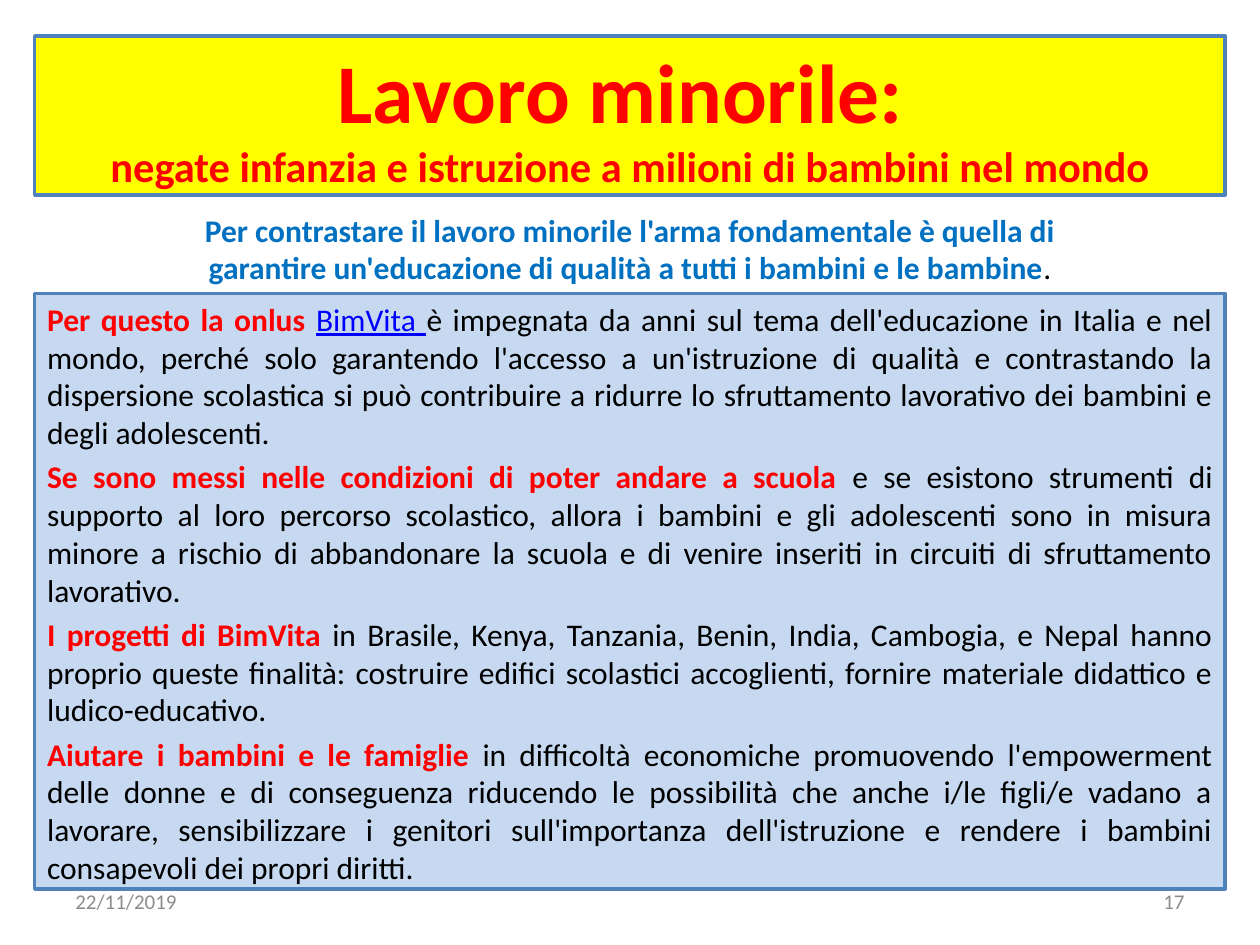
from pptx import Presentation
from pptx.dml.color import RGBColor
from pptx.enum.shapes import MSO_SHAPE as SHAPE
from pptx.enum.text import MSO_ANCHOR as ANCHOR, PP_ALIGN as ALIGN
from pptx.util import Cm, Pt

FONT = "Calibri"
RED = RGBColor(0xFF, 0x00, 0x00)
YELLOW = RGBColor(0xFF, 0xFF, 0x00)
PALE_BLUE = RGBColor(0xC6, 0xD9, 0xF1)
BORDER = RGBColor(0x4F, 0x81, 0xBD)
BLUE = RGBColor(0x00, 0x70, 0xC0)
LINK = RGBColor(0x00, 0x00, 0xFF)
BLACK = RGBColor(0x00, 0x00, 0x00)
GREY = RGBColor(0x8C, 0x8C, 0x8C)

BODY = [
    [("Per questo la onlus ", RED), ("BimVita ", LINK),
     ("è impegnata da anni sul tema dell'educazione in Italia e nel mondo, "
      "perché solo garantendo l'accesso a un'istruzione di qualità e "
      "contrastando la dispersione scolastica si può contribuire a ridurre lo "
      "sfruttamento lavorativo dei bambini e degli adolescenti. ", BLACK)],
    [("Se sono messi nelle condizioni di poter andare a scuola ", RED),
     ("e se esistono strumenti di supporto al loro percorso scolastico, allora "
      "i bambini e gli adolescenti sono in misura minore a rischio di "
      "abbandonare la scuola e di venire inseriti in circuiti di sfruttamento "
      "lavorativo.", BLACK)],
    [("I progetti di BimVita ", RED),
     ("in Brasile, Kenya, Tanzania, Benin, India, Cambogia, e Nepal hanno "
      "proprio queste finalità: costruire edifici scolastici accoglienti, "
      "fornire materiale didattico e ludico-educativo.", BLACK)],
    [("Aiutare i bambini e le famiglie ", RED),
     ("in difficoltà economiche promuovendo l'empowerment delle donne e di "
      "conseguenza riducendo le possibilità che anche i/le figli/e vadano a "
      "lavorare, sensibilizzare i genitori sull'importanza dell'istruzione e "
      "rendere i bambini consapevoli dei propri diritti.", BLACK)],
]


def add_panel(s, box, fill, anchor):
    sp = s.shapes.add_shape(SHAPE.RECTANGLE, *box)
    sp.shadow.inherit = False
    sp.fill.solid()
    sp.fill.fore_color.rgb = fill
    sp.line.color.rgb = BORDER
    sp.line.width = Pt(2)
    tf = sp.text_frame
    tf.word_wrap = True
    tf.vertical_anchor = anchor
    return tf


def add_text(s, box, anchor):
    tf = s.shapes.add_textbox(*box).text_frame
    tf.word_wrap = True
    tf.vertical_anchor = anchor
    return tf


def style(p, align, size=None):
    p.alignment = align
    p.font.name = FONT
    if size:
        p.font.size = Pt(size)


def add_run(p, text, color, bold=False, size=None):
    r = p.add_run()
    r.text = text
    r.font.color.rgb = color
    r.font.bold = bold
    if size:
        r.font.size = Pt(size)
    return r


def add_title(s, box):
    p = add_panel(s, box, YELLOW, ANCHOR.MIDDLE).paragraphs[0]
    style(p, ALIGN.CENTER)
    add_run(p, "Lavoro minorile: ", RED, True, 47.7)
    p.add_line_break()
    add_run(p, "negate infanzia e istruzione a milioni di bambini nel mondo",
            RED, True, 24.3)


def add_message(s, box):
    p = add_text(s, box, ANCHOR.TOP).paragraphs[0]
    style(p, ALIGN.CENTER, 18)
    add_run(p, "Per contrastare il lavoro minorile l'arma fondamentale è quella "
            "di garantire un'educazione di qualità a tutti i bambini e le "
            "bambine", BLUE, True)
    add_run(p, ".", BLACK)


def add_body(s, box):
    tf = add_panel(s, box, PALE_BLUE, ANCHOR.TOP)
    for i, runs in enumerate(BODY):
        p = tf.add_paragraph() if i else tf.paragraphs[0]
        style(p, ALIGN.JUSTIFY, 18)
        p.space_before = Pt(3.6)
        for text, color in runs:
            r = add_run(p, text, color, color == RED)
            if color == LINK:
                r.font.underline = True


def add_footer(s, box):
    left, top, width, height = box
    part = Cm(5.92)
    for x, text, align in ((left, "22/11/2019", ALIGN.LEFT),
                           (left + width - part, "17", ALIGN.RIGHT)):
        p = add_text(s, (x, top, part, height), ANCHOR.MIDDLE).paragraphs[0]
        style(p, align, 12)
        add_run(p, text, GREY)


def main():
    prs = Presentation()
    prs.slide_width, prs.slide_height = Cm(25.4), Cm(19.05)
    s = prs.slides.add_slide(prs.slide_layouts[6])
    left, width = Cm(0.7), Cm(24)
    add_title(s, (left, Cm(0.73), width, Cm(3.2)))
    add_body(s, (left, Cm(5.92), width, Cm(12)))
    add_footer(s, (Cm(1.27), Cm(17.65), Cm(22.86), Cm(1.02)))
    add_message(s, (Cm(2.7), Cm(4.12), Cm(20), Cm(1.8)))
    prs.save("out.pptx")


if __name__ == "__main__":
    main()
